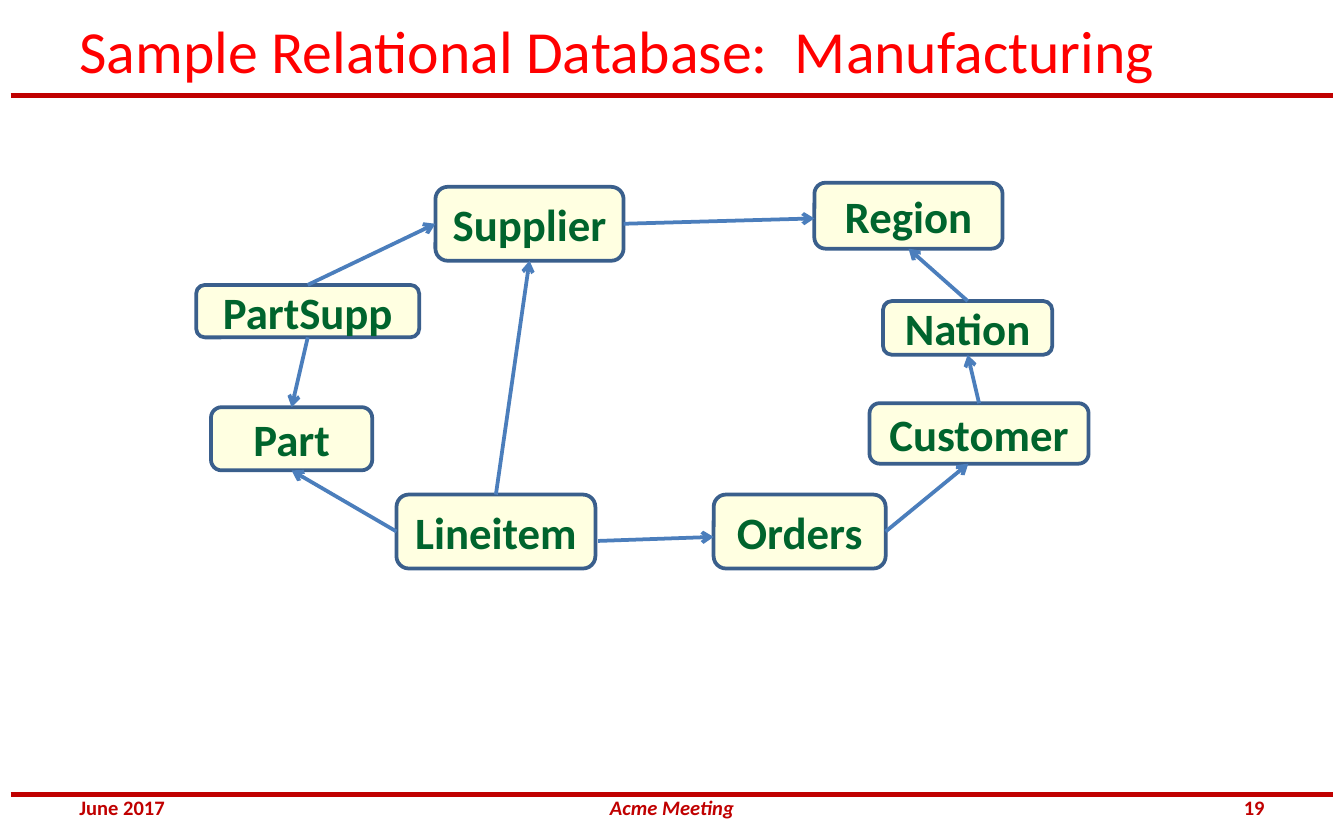
from dataclasses import dataclass

from lxml import etree
from pptx import Presentation
from pptx import util as u
from pptx.dml.color import RGBColor
from pptx.enum import shapes, text
from pptx.oxml.ns import qn

COLS, ROWS = 100, 62.5  # grid of square cells over the slide
CELL = u.Inches(0.1)
FONT = "Calibri"

TITLE_RED = RGBColor(0xFF, 0x00, 0x00)
RULE_RED = RGBColor(0xC0, 0x00, 0x00)
BOX_FILL = RGBColor(0xFF, 0xFF, 0xE1)
BOX_EDGE = RGBColor(0x3A, 0x5F, 0x8C)
BOX_TEXT = RGBColor(0x00, 0x64, 0x2D)
ARROW_BLUE = RGBColor(0x4B, 0x7E, 0xBC)

Point = tuple[float, float]
# Shares of a box's width and height at the middle of each side
SIDES = {"top": (0.5, 0), "left": (0, 0.5), "bottom": (0.5, 1), "right": (1, 0.5)}


@dataclass(frozen=True)
class Table:
    name: str
    col: float
    row: float
    cols: float
    rows: float

    def side(self, name: str) -> Point:
        fx, fy = SIDES[name]
        return self.col + fx * self.cols, self.row + fy * self.rows


@dataclass(frozen=True)
class Reference:
    """Arrow between two tables, with optional shifts of its ends in cells."""
    source: str
    source_side: str
    target: str
    target_side: str
    source_shift: Point = (0, 0)
    target_shift: Point = (0, 0)


@dataclass(frozen=True)
class Label:
    words: str
    col: float
    row: float
    cols: float
    rows: float
    size: float
    color: RGBColor
    align: text.PP_ALIGN = text.PP_ALIGN.LEFT
    bold: bool = False
    italic: bool = False


TABLES = [
    Table("Part", 15.7, 30.3, 12, 4.7),
    Table("PartSupp", 14.6, 21.2, 16.6, 3.9),
    Table("Supplier", 32.4, 13.9, 14, 5.5),
    Table("Lineitem", 29.5, 36.8, 14.8, 5.5),
    Table("Customer", 64.7, 30, 16.3, 4.5),
    Table("Orders", 53.1, 36.8, 12.8, 5.5),
    Table("Nation", 65.7, 22.4, 12.6, 4),
    Table("Region", 60.6, 13.6, 14, 4.9),
]
REFERENCES = [
    Reference("Orders", "right", "Customer", "bottom", target_shift=(-0.8, 0)),
    Reference("Lineitem", "right", "Orders", "left", (0.2, 0.7), (0, 0.4)),
    Reference("Lineitem", "left", "Part", "bottom"),
    Reference("Lineitem", "top", "Supplier", "bottom"),
    Reference("PartSupp", "top", "Supplier", "left"),
    Reference("PartSupp", "bottom", "Part", "top"),
    Reference("Customer", "top", "Nation", "bottom"),
    Reference("Nation", "top", "Region", "bottom"),
    Reference("Supplier", "right", "Region", "left", target_shift=(0, 0.2)),
]
MARGIN, FOOT_ROW, FOOT_COLS = 5, 58.8, 23.3
LABELS = [
    Label("Sample Relational Database:  Manufacturing", MARGIN, 1.2, 93.8, 5, 32, TITLE_RED),
    Label("June 2017", MARGIN, FOOT_ROW, FOOT_COLS, 2.5, 11, RULE_RED, bold=True),
    Label("Acme Meeting", 32.1, FOOT_ROW, 35.8, 2.5, 11, RULE_RED,
          text.PP_ALIGN.CENTER, bold=True, italic=True),
    Label("19", COLS - MARGIN - FOOT_COLS, FOOT_ROW, FOOT_COLS, 2.5, 11, RULE_RED,
          text.PP_ALIGN.RIGHT, bold=True),
]
RULE_ROWS = (7.1, 59.1)
RULE_INSET = 0.8


def cells(*values: float) -> list[int]:
    return [round(v * CELL) for v in values]


def write(tf, words: str, size: float, color: RGBColor, align: text.PP_ALIGN,
          bold: bool = False, italic: bool = False) -> None:
    tf.vertical_anchor = text.MSO_ANCHOR.MIDDLE
    p = tf.paragraphs[0]
    p.text, p.alignment = words, align
    p.font.name, p.font.size = FONT, u.Pt(size)
    p.font.bold, p.font.italic = bold, italic
    p.font.color.rgb = color


def add_label(s, label: Label) -> None:
    sp = s.shapes.add_textbox(*cells(label.col, label.row, label.cols, label.rows))
    tf = sp.text_frame
    tf.word_wrap = True
    tf.margin_left = tf.margin_right = u.Inches(0.09)
    tf.margin_top = tf.margin_bottom = u.Inches(0.04)
    write(tf, label.words, label.size, label.color, label.align, label.bold, label.italic)


def add_table_box(s, table: Table) -> None:
    sp = s.shapes.add_shape(shapes.MSO_SHAPE.ROUNDED_RECTANGLE,
                            *cells(table.col, table.row, table.cols, table.rows))
    sp.shadow.inherit = False
    sp.fill.solid()
    sp.fill.fore_color.rgb = BOX_FILL
    sp.line.color.rgb = BOX_EDGE
    sp.line.width = u.Pt(2)
    sp.text_frame.word_wrap = False
    write(sp.text_frame, table.name, 24, BOX_TEXT, text.PP_ALIGN.CENTER, bold=True)


def add_line(s, start: Point, end: Point, color: RGBColor, width: float,
             arrow: bool = False) -> None:
    line = s.shapes.add_connector(shapes.MSO_CONNECTOR.STRAIGHT, *cells(*start, *end))
    line.line.color.rgb = color
    line.line.width = u.Pt(width)
    if arrow:
        etree.SubElement(line.line._get_or_add_ln(), qn("a:tailEnd"), type="arrow")
    etree.SubElement(line._element.spPr, qn("a:effectLst"))


def add_reference(s, ref: Reference, tables: dict[str, Table]) -> None:
    x1, y1 = tables[ref.source].side(ref.source_side)
    x2, y2 = tables[ref.target].side(ref.target_side)
    (dx1, dy1), (dx2, dy2) = ref.source_shift, ref.target_shift
    add_line(s, (x1 + dx1, y1 + dy1), (x2 + dx2, y2 + dy2), ARROW_BLUE, 2, arrow=True)


def main() -> None:
    prs = Presentation()
    prs.slide_width, prs.slide_height = cells(COLS, ROWS)
    s = prs.slides.add_slide(prs.slide_layouts[6])
    for row in RULE_ROWS:
        add_line(s, (RULE_INSET, row), (COLS - RULE_INSET, row), RULE_RED, 2.75)
    for label in LABELS:
        add_label(s, label)
    for table in TABLES:
        add_table_box(s, table)
    by_name = {table.name: table for table in TABLES}
    for ref in REFERENCES:
        add_reference(s, ref, by_name)
    prs.save("out.pptx")


if __name__ == "__main__":
    main()
